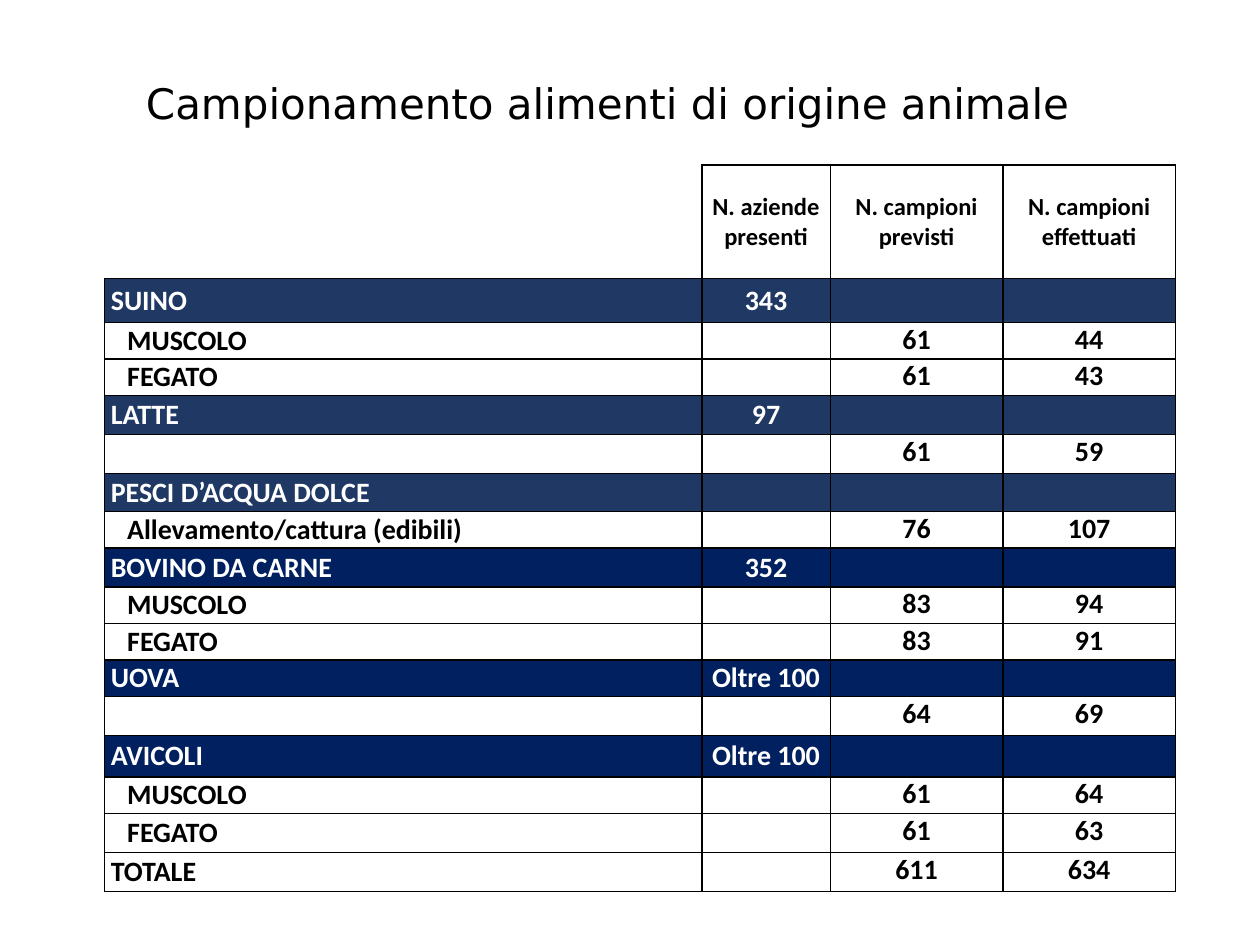
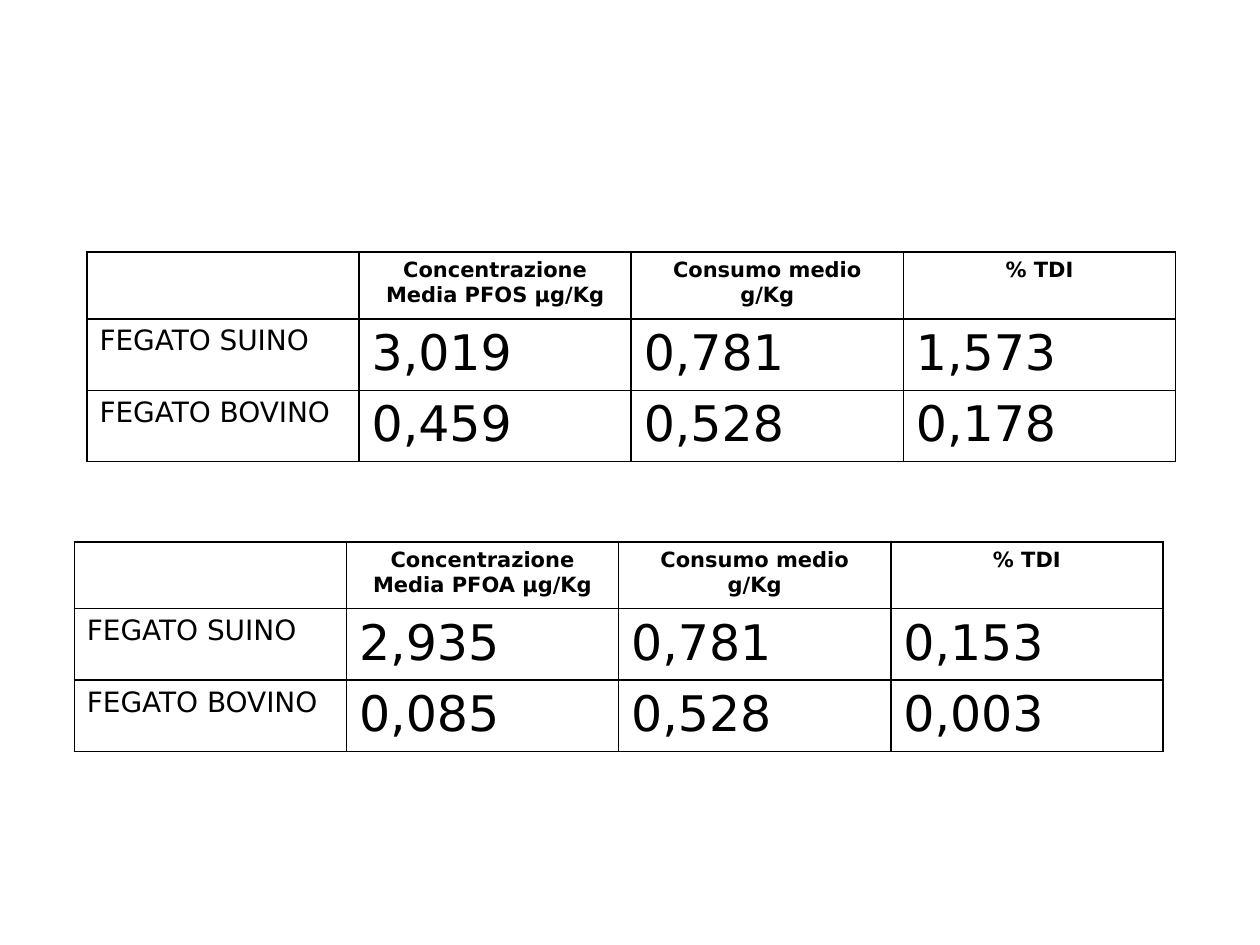
from lxml import etree
from pptx import Presentation
from pptx.dml.color import RGBColor
from pptx.enum.text import MSO_ANCHOR, PP_ALIGN
from pptx.oxml.ns import qn
from pptx.util import Inches, Pt

TOP, MID = MSO_ANCHOR.TOP, MSO_ANCHOR.MIDDLE
LEFT, CENTER = PP_ALIGN.LEFT, PP_ALIGN.CENTER

COLORS = {"black": "000000", "white": "FFFFFF", "steel": "1F3864", "navy": "002060"}
TITLE = {"name": "DejaVu Sans", "size": Pt(24), "bold": False}
HEAD = {"name": "Calibri", "size": Pt(14), "bold": True}
BODY = {**HEAD, "size": Pt(16)}
LABEL = {**TITLE, "size": Pt(16)}
VALUE = {**TITLE, "size": Pt(28)}
CAPTION = {"name": "DejaVu Sans", "size": Pt(12), "bold": True}
TIGHT = {"margin_left": Inches(0.05), "margin_right": Inches(0.05),
         "margin_top": 0, "margin_bottom": 0}

# Row height, band colour (None for plain rows), cell texts
SAMPLES = [
    (0.35, "steel", "SUINO", "343", "", ""),
    (0.29, None, "MUSCOLO", "", "61", "44"),
    (0.29, None, "FEGATO", "", "61", "43"),
    (0.31, "steel", "LATTE", "97", "", ""),
    (0.31, None, "", "", "61", "59"),
    (0.3, "steel", "PESCI D’ACQUA DOLCE", "", "", ""),
    (0.29, None, "Allevamento/cattura (edibili)", "", "76", "107"),
    (0.31, "navy", "BOVINO DA CARNE", "352", "", ""),
    (0.29, None, "MUSCOLO", "", "83", "94"),
    (0.29, None, "FEGATO", "", "83", "91"),
    (0.29, "navy", "UOVA", "Oltre 100", "", ""),
    (0.31, None, "", "", "64", "69"),
    (0.33, "navy", "AVICOLI", "Oltre 100", "", ""),
    (0.29, None, "MUSCOLO", "", "61", "64"),
    (0.31, None, "FEGATO", "", "61", "63"),
    (0.31, None, "TOTALE", "", "611", "634"),
]
INTAKE = [
    (0.69, 2, "PFOS", ("3,019", "0,781", "1,573"), ("0,459", "0,528", "0,178")),
    (0.59, 4.3, "PFOA", ("2,935", "0,781", "0,153"), ("0,085", "0,528", "0,003")),
]


def rgb(key):
    return RGBColor.from_string(COLORS[key])


def apply(target, values):
    for name, value in values.items():
        setattr(target, name, value)


def style(para, font, color="black", align=LEFT):
    para.alignment = align
    for run in para.runs:
        apply(run.font, font)
        run.font.color.rgb = rgb(color)


def border(cell, sides):
    props = cell._tc.get_or_add_tcPr()
    for side in sides:
        line = etree.SubElement(props, qn("a:ln" + side), w=str(Pt(1)))
        fill = etree.SubElement(line, qn("a:solidFill"))
        etree.SubElement(fill, qn("a:srgbClr"), val=COLORS["black"])


def put(cell, text, font, color="black", fill="white", align=LEFT,
        anchor=TOP, sides="LRTB", indent=0):
    border(cell, sides)
    cell.fill.solid()
    cell.fill.fore_color.rgb = rgb(fill)
    cell.vertical_anchor = anchor
    cell.text = text
    for para in cell.text_frame.paragraphs:
        style(para, font, color, align)
        if indent:
            para._p.get_or_add_pPr().set("indent", str(Inches(indent)))
        if not text:
            # Small empty text keeps the row from growing
            para._p.get_or_add_endParaRPr().set("sz", "1000")


def grid(slide, left, top, widths, heights):
    frame = slide.shapes.add_table(
        len(heights), len(widths), Inches(left), Inches(top),
        Inches(sum(widths)), Inches(sum(heights)))
    table = frame.table
    table.first_row = table.horz_banding = False
    for col, width in zip(table.columns, widths):
        col.width = Inches(width)
    for row, height in zip(table.rows, heights):
        row.height = Inches(height)
    return table


def title(slide, text):
    box = slide.shapes.add_textbox(Inches(1.06), Inches(0.57), Inches(8.19), Inches(0.5))
    frame = box.text_frame
    frame.word_wrap = True
    frame.text = text
    style(frame.paragraphs[0], TITLE)


def samples(slide):
    heights = [0.9] + [row[0] for row in SAMPLES]
    table = grid(slide, 0.83, 1.31, [4.74, 1.02, 1.37, 1.37], heights)
    for cell in table.iter_cells():
        apply(cell, TIGHT)

    # Header row, with an open corner
    heads = ["", "N. aziende\npresenti", "N. campioni\nprevisti", "N. campioni\neffettuati"]
    for col, text in enumerate(heads):
        put(table.cell(0, col), text, HEAD, align=CENTER, anchor=MID,
            sides="LRTB" if col else "RB")

    # Bands and their detail rows
    for row, (_, band, *texts) in enumerate(SAMPLES, 1):
        plain = band is None
        for col, text in enumerate(texts):
            inset = plain and col == 0 and text != "TOTALE"
            put(table.cell(row, col), text, BODY,
                color="black" if plain else "white", fill=band or "white",
                align=CENTER if col else LEFT, anchor=MID if col < 2 else TOP,
                indent=0.13 if inset else 0)


def intake(slide, left, top, agent, pork, beef):
    table = grid(slide, left, top, [2.16] * 4, [0.53, 0.55, 0.55])
    heads = ["", f"Concentrazione\nMedia {agent} µg/Kg", "Consumo medio\ng/Kg", "% TDI"]
    for col, text in enumerate(heads):
        put(table.cell(0, col), text, CAPTION, align=CENTER)
    rows = [("FEGATO SUINO", *pork), ("FEGATO BOVINO", *beef)]
    for row, texts in enumerate(rows, 1):
        for col, text in enumerate(texts):
            put(table.cell(row, col), text, VALUE if col else LABEL)


def main():
    deck = Presentation()
    deck.slide_width, deck.slide_height = Inches(10), Inches(7.5)
    blank = deck.slide_layouts[6]

    # Slide 1: sampling plan
    slide = deck.slides.add_slide(blank)
    title(slide, "Campionamento alimenti di origine animale")
    samples(slide)

    # Slide 2: intake from liver
    slide = deck.slides.add_slide(blank)
    for data in INTAKE:
        intake(slide, *data)

    deck.save("out.pptx")


if __name__ == "__main__":
    main()
